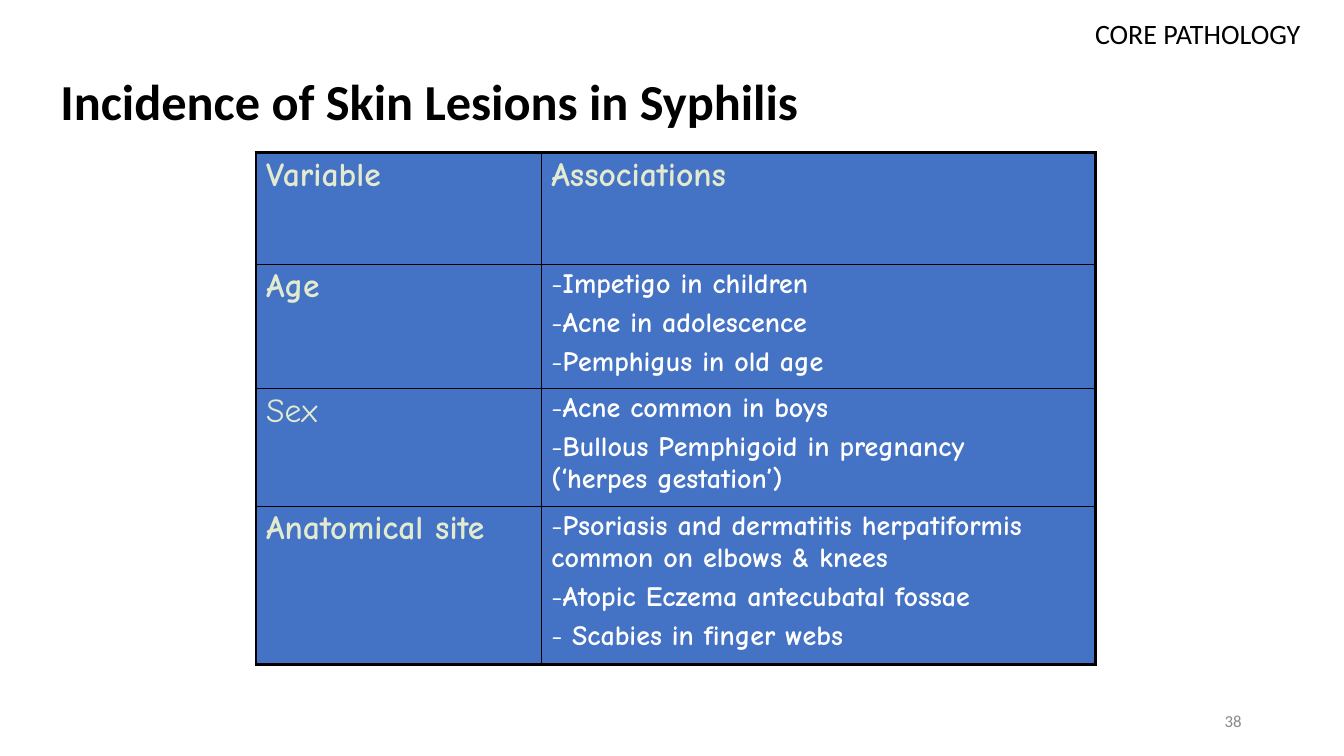
from lxml.etree import SubElement
from pptx import Presentation
from pptx.dml.color import RGBColor
from pptx.enum.text import MSO_ANCHOR as Anchor, MSO_AUTO_SIZE as AutoSize, PP_ALIGN as Align
from pptx.oxml.ns import qn
from pptx.util import Pt

BLACK = RGBColor(0x00, 0x00, 0x00)
WHITE = RGBColor(0xFF, 0xFF, 0xFF)
GREY = RGBColor(0x88, 0x88, 0x88)
BLUE = RGBColor(0x44, 0x72, 0xC4)
PALE_GREEN = RGBColor(0xE2, 0xEA, 0xCF)

BODY_FONT = "Calibri"
TABLE_FONT = "Comic Neue"
THIN, THICK = 1, 2.25

COLUMN_WIDTHS = [203.8, 396]
ROW_HEIGHTS = [79.9, 88.6, 84.2, 113]

# Each association is a (dash, text) pair; an empty dash continues the line above.
HEADERS = ["Variable", "Associations"]
ASSOCIATIONS = [
    ("Age", [("-", "Impetigo in children"),
             ("-", "Acne in adolescence"),
             ("-", "Pemphigus in old age")]),
    ("Sex", [("-", "Acne common in boys"),
             ("-", "Bullous Pemphigoid in pregnancy"),
             ("", "(‘herpes gestation’)")]),
    ("Anatomical site", [("-", "Psoriasis and dermatitis herpatiformis common on elbows & knees"),
                         ("-", "Atopic Eczema antecubatal fossae"),
                         ("- ", "Scabies in finger webs")]),
]


def add_text(paragraph, text, size, font=BODY_FONT, color=BLACK, bold=False, align=Align.LEFT):
    paragraph.alignment = align
    run = paragraph.add_run()
    run.text = text
    run.font.name = font
    run.font.size = Pt(size)
    run.font.bold = bold
    run.font.color.rgb = color


def add_label(slide, text, left, top, width, height, margin=3.6, anchor=Anchor.TOP, **text_format):
    """Add a right-aligned text box of one line."""
    frame = slide.shapes.add_textbox(Pt(left), Pt(top), Pt(width), Pt(height)).text_frame
    frame.word_wrap = True
    frame.vertical_anchor = anchor
    frame.margin_top = frame.margin_bottom = Pt(margin)
    add_text(frame.paragraphs[0], text, align=Align.RIGHT, **text_format)


def set_title(slide, text):
    title = slide.shapes.title
    title.left, title.top, title.width, title.height = Pt(36), Pt(16.6), Pt(894.2), Pt(104.4)
    frame = title.text_frame
    frame.auto_size = AutoSize.NONE
    frame.vertical_anchor = Anchor.MIDDLE
    frame.paragraphs[0].line_spacing = 1.15
    add_text(frame.paragraphs[0], text, size=36, bold=True)


def set_borders(cell, **widths):
    """Draw black borders; the keys are L, R, T and B in this order."""
    properties = cell._tc.get_or_add_tcPr()
    for side, width in widths.items():
        line = SubElement(properties, qn(f"a:ln{side}"), w=str(Pt(width)))
        fill = SubElement(line, qn("a:solidFill"))
        SubElement(fill, qn("a:srgbClr"), val=str(BLACK))


def indent(paragraph):
    properties = paragraph._p.get_or_add_pPr()
    properties.set("marL", str(Pt(7.2)))
    properties.set("indent", "0")


def fill_heading(cell, text, bold=True):
    cell.margin_top = Pt(2.4)
    paragraph = cell.text_frame.paragraphs[0]
    indent(paragraph)
    add_text(paragraph, text, size=24, font=TABLE_FONT, color=PALE_GREEN, bold=bold)


def fill_associations(cell, lines):
    cell.margin_top = Pt(2.9)
    frame = cell.text_frame
    for index, (dash, text) in enumerate(lines):
        paragraph = frame.add_paragraph() if index else frame.paragraphs[0]
        indent(paragraph)
        if index and dash:
            paragraph.space_before = Pt(4.8)
        if dash:
            add_text(paragraph, dash, size=20, font=TABLE_FONT, color=WHITE)
        add_text(paragraph, text, size=20, font=TABLE_FONT, color=WHITE, bold=True)


def add_associations_table(slide):
    rows, columns = len(ROW_HEIGHTS), len(COLUMN_WIDTHS)
    table = slide.shapes.add_table(rows, columns, Pt(182.9), Pt(109),
                                   Pt(sum(COLUMN_WIDTHS)), Pt(sum(ROW_HEIGHTS))).table
    table.first_row = table.horz_banding = False
    for column, width in zip(table.columns, COLUMN_WIDTHS):
        column.width = Pt(width)
    for row, height in zip(table.rows, ROW_HEIGHTS):
        row.height = Pt(height)

    for r in range(rows):
        for c in range(columns):
            cell = table.cell(r, c)
            set_borders(cell,
                        L=THICK if c == 0 else THIN,
                        R=THICK if c == columns - 1 else THIN,
                        T=THICK if r == 0 else THIN,
                        B=THICK if r == rows - 1 else THIN)
            cell.fill.solid()
            cell.fill.fore_color.rgb = BLUE
            cell.margin_left = cell.margin_right = cell.margin_bottom = 0

    for c, header in enumerate(HEADERS):
        fill_heading(table.cell(0, c), header)
    for r, (variable, lines) in enumerate(ASSOCIATIONS, start=1):
        fill_heading(table.cell(r, 0), variable, bold=variable != "Sex")
        fill_associations(table.cell(r, 1), lines)


def main():
    presentation = Presentation()
    presentation.slide_width, presentation.slide_height = Pt(960), Pt(540)
    slide = presentation.slides.add_slide(presentation.slide_layouts[5])
    add_label(slide, "38", 678, 500.5, 216, 28.75, anchor=Anchor.MIDDLE, size=12, color=GREY)
    set_title(slide, "Incidence of Skin Lesions in Syphilis")
    add_label(slide, "CORE PATHOLOGY", 686, 4.5, 250, 32.5, margin=7.2, size=20)
    add_associations_table(slide)
    presentation.save("out.pptx")


if __name__ == "__main__":
    main()
